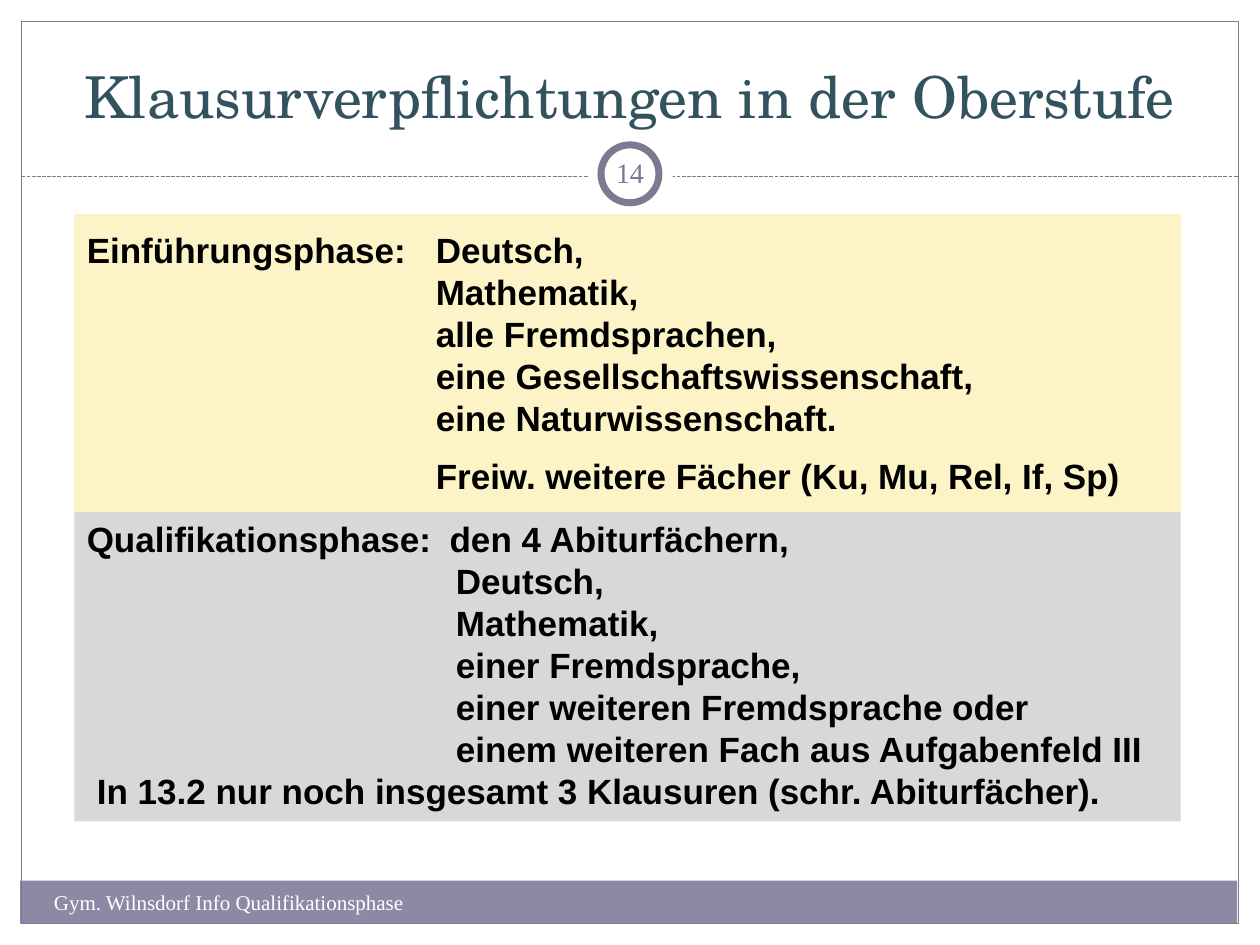
from lxml import etree
from pptx import Presentation, util as u
from pptx.dml.color import RGBColor
from pptx.enum import dml, shapes, text
from pptx.oxml.ns import qn

THEME = {
    "white": "FFFFFF", "frame": "7C7991", "band": "8D89A4",
    "yellow": "FCF4C7", "grey": "D8D8D8",
    "title": {"name": "TeX Gyre Schola", "size": 33, "color": "32525D"},
    "body": {"name": "Arial", "size": 20, "color": "000000", "bold": True},
    "number": {"name": "Times New Roman", "size": 16, "color": "7B7890"},
    "footer": {"name": "Times New Roman", "size": 12, "color": "FFFFFF"},
}
ANCHOR, ALIGN = text.MSO_ANCHOR, text.PP_ALIGN
MSO = shapes.MSO_SHAPE

prs = Presentation()
prs.slide_width, prs.slide_height = u.Inches(10), u.Inches(7.5)
s = prs.slides.add_slide(prs.slide_layouts[6])


def add_shape(kind, box, fill=None, line=None, width=0.75):
    sp = s.shapes.add_shape(kind, *map(u.Inches, box))
    sp.shadow.inherit = False
    for part, color in ((sp.fill, fill), (sp.line.fill, line)):
        if color:
            part.solid()
            part.fore_color.rgb = RGBColor.from_string(THEME[color])
        else:
            part.background()
    if line:
        sp.line.width = u.Pt(width)
    return sp


def write(sp, lines, style, align=ALIGN.LEFT, **frame):
    tf = sp.text_frame
    for key, value in {"word_wrap": True, "vertical_anchor": ANCHOR.TOP, **frame}.items():
        setattr(tf, key, value)
    for i, (words, indent, hanging, gap) in enumerate(lines):
        p = tf.paragraphs[0] if i == 0 else tf.add_paragraph()
        p.alignment = align
        if gap:
            p.space_before = u.Pt(gap)
        if indent:
            pPr = p._p.get_or_add_pPr()
            pPr.set("marL", str(u.Inches(indent)))
            pPr.set("indent", str(-u.Inches(indent) if hanging else 0))
        r = p.add_run()
        r.text = words
        for key, value in THEME[style].items():
            if key == "color":
                r.font.color.rgb = RGBColor.from_string(value)
            else:
                setattr(r.font, key, u.Pt(value) if key == "size" else value)


add_shape(MSO.RECTANGLE, (0.16, 6.99, 9.66, 0.34), "band")
add_shape(MSO.RECTANGLE, (0.17, 0.17, 9.66, 7.16), line="frame")

rule = s.shapes.add_connector(shapes.MSO_CONNECTOR.STRAIGHT, *map(u.Inches, (0.17, 1.4, 9.83, 1.4)))
rule.line.color.rgb = RGBColor.from_string(THEME["frame"])
rule.line.width = u.Pt(0.75)
rule.line.dash_style = dml.MSO_LINE.SQUARE_DOT
etree.SubElement(rule._element.spPr, qn("a:effectLst"))

add_shape(MSO.OVAL, (4.67, 1.05, 0.67, 0.67), "white")
add_shape(MSO.OVAL, (4.77, 1.15, 0.46, 0.46), "white", "frame", 4)

title = s.shapes.add_textbox(*map(u.Inches, (0.33, 0.25, 9.33, 0.83)))
write(title, [("Klausurverpflichtungen in der Oberstufe", 0, False, 0)], "title",
      ALIGN.CENTER, vertical_anchor=ANCHOR.BOTTOM)

number = s.shapes.add_textbox(*map(u.Inches, (4.75, 1.13, 0.5, 0.48)))
margins = {f"margin_{side}": u.Inches(0.05) for side in ("left", "top", "right", "bottom")}
write(number, [("14", 0, False, 0)], "number", ALIGN.CENTER,
      vertical_anchor=ANCHOR.MIDDLE, **margins)

footer = s.shapes.add_textbox(*map(u.Inches, (0.33, 7.01, 3.92, 0.4)))
write(footer, [("Gym. Wilnsdorf Info Qualifikationsphase", 0, False, 0)], "footer")

qualification = add_shape(MSO.RECTANGLE, (0.59, 4.06, 8.78, 2.46), "grey")
subjects = ["Deutsch,", "Mathematik,", "einer Fremdsprache,",
            "einer weiteren Fremdsprache oder",
            "einem weiteren Fach aus Aufgabenfeld III"]
write(qualification, [
    ("Qualifikationsphase:\tden 4 Abiturfächern,", 2.88, True, 0),
    *[(subject, 2.93, False, 0) for subject in subjects],
    ("In 13.2 nur noch insgesamt 3 Klausuren (schr. Abiturfächer).", 0.08, False, 0),
], "body")

introduction = add_shape(MSO.RECTANGLE, (0.59, 1.7, 8.78, 2.36), "yellow", "yellow")
subjects = ["Mathematik,", "alle Fremdsprachen,", "eine Gesellschaftswissenschaft,",
            "eine Naturwissenschaft."]
write(introduction, [
    ("Einführungsphase:\tDeutsch,", 2.77, True, 0),
    *[(subject, 2.77, False, 0) for subject in subjects],
    ("Freiw. weitere Fächer (Ku, Mu, Rel, If, Sp)", 2.77, False, 9),
], "body", vertical_anchor=ANCHOR.MIDDLE)

prs.save("out.pptx")
